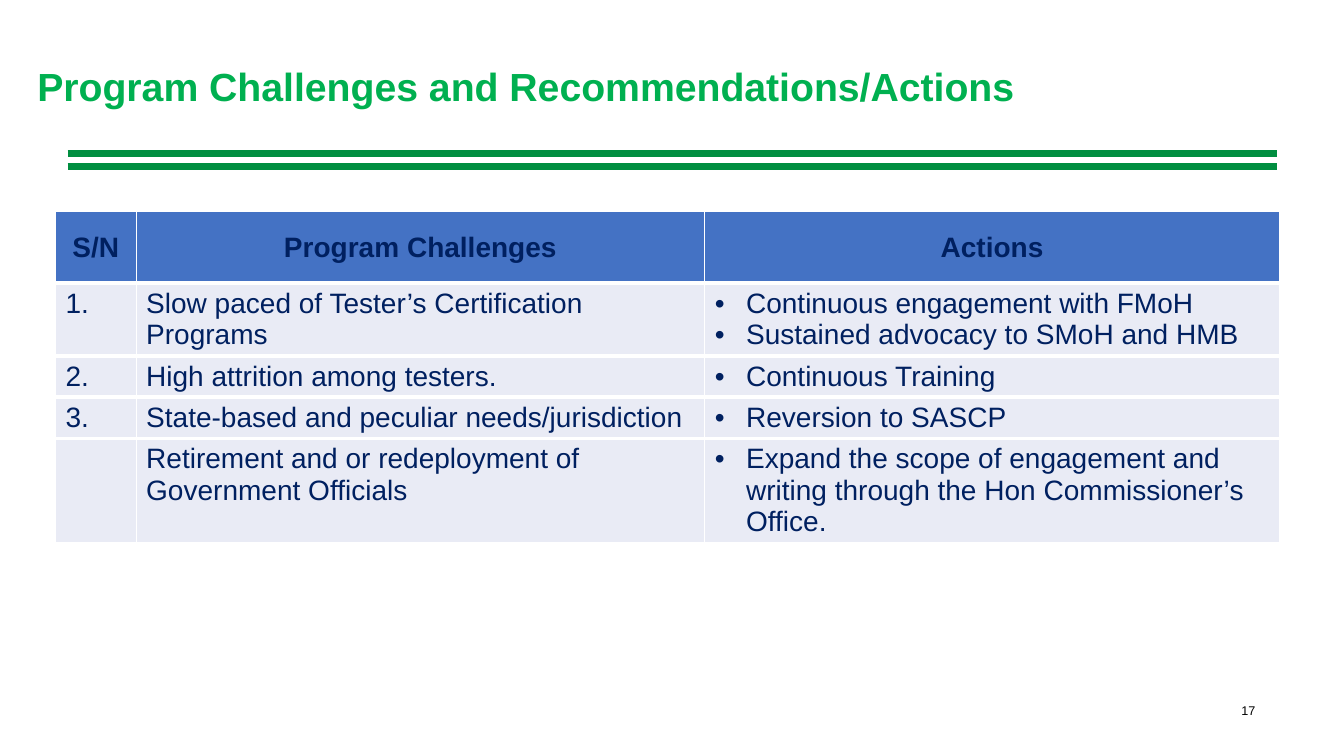
from pptx import Presentation
from pptx.dml.color import RGBColor
from pptx.enum.shapes import MSO_CONNECTOR
from pptx.enum.text import MSO_ANCHOR, MSO_AUTO_SIZE, PP_ALIGN
from pptx.oxml import parse_xml
from pptx.oxml.ns import nsdecls
from pptx.util import Inches, Pt

STRAIGHT = MSO_CONNECTOR.STRAIGHT
TOP, MIDDLE = MSO_ANCHOR.TOP, MSO_ANCHOR.MIDDLE
LEFT, CENTER, RIGHT = PP_ALIGN.LEFT, PP_ALIGN.CENTER, PP_ALIGN.RIGHT
NO_FIT = MSO_AUTO_SIZE.NONE

COLORS = {"title": "00B050", "rule": "008E40", "header": "4472C4",
          "body": "E9EBF5", "text": "002060", "border": "FFFFFF",
          "number": "000000"}
TITLE_FONT = {"name": "Arial", "size": Pt(28), "bold": True}
HEADER_FONT = {"name": "Arial", "size": Pt(20), "bold": True}
BODY_FONT = {"name": "Arial", "size": Pt(20), "bold": False}
NUMBER_FONT = {"name": "Arial", "size": Pt(9), "bold": False}

COLUMNS = [0.8, 5.64, 5.7]
ROW_HEIGHTS = [0.71, 0.71, 0.41, 0.41, 1.02]
HEADINGS = ["S/N", "Program Challenges", "Actions"]
CHALLENGES = [
    ("1.", "Slow paced of Tester’s Certification Programs",
     ["Continuous engagement with FMoH",
      "Sustained advocacy to SMoH and HMB"]),
    ("2.", "High attrition among testers.", ["Continuous Training"]),
    ("3.", "State-based and peculiar needs/jurisdiction",
     ["Reversion to SASCP"]),
    ("", "Retirement and or redeployment of Government Officials",
     ["Expand the scope of engagement and writing through the Hon "
      "Commissioner’s Office."]),
]


def rgb(name):
    return RGBColor.from_string(COLORS[name])


def write(p, text, font, color, align=LEFT):
    p.alignment = align
    r = p.add_run()
    r.text = text
    for key, value in font.items():
        setattr(r.font, key, value)
    r.font.color.rgb = rgb(color)


def add_bullet(p):
    pPr = p._p.get_or_add_pPr()
    pPr.set("marL", str(Inches(0.31)))
    pPr.set("indent", str(-Inches(0.31)))
    pPr.append(parse_xml(f'<a:buFont {nsdecls("a")} typeface="Arial"/>'))
    pPr.append(parse_xml(f'<a:buChar {nsdecls("a")} char="•"/>'))


def set_borders(cell, top, bottom):
    widths = {"lnL": 1, "lnR": 1, "lnT": top, "lnB": bottom}
    tcPr = cell._tc.get_or_add_tcPr()
    for i, (side, width) in enumerate(widths.items()):
        tcPr.insert(i, parse_xml(
            f'<a:{side} {nsdecls("a")} w="{Pt(width)}"><a:solidFill>'
            f'<a:srgbClr val="{COLORS["border"]}"/></a:solidFill></a:{side}>'))


def add_title(s, x, y, w, h):
    title = s.shapes.title
    title.left, title.top = Inches(x), Inches(y)
    title.width, title.height = Inches(w), Inches(h)
    tf = title.text_frame
    tf.word_wrap, tf.auto_size = True, NO_FIT
    tf.vertical_anchor = MIDDLE
    p = tf.paragraphs[0]
    p.line_spacing = 0.9
    write(p, "Program Challenges and Recommendations/Actions",
          TITLE_FONT, "title")


def add_double_rule(s, x, y, w, gap):
    for line_y in (y, y + gap):
        line = s.shapes.add_connector(
            STRAIGHT, Inches(x), Inches(line_y), Inches(x + w), Inches(line_y))
        line.line.color.rgb = rgb("rule")
        line.line.width = Pt(5)
        line._element.spPr.append(parse_xml(f'<a:effectLst {nsdecls("a")}/>'))


def add_challenges(s, x, y):
    table = s.shapes.add_table(
        len(ROW_HEIGHTS), len(COLUMNS), Inches(x), Inches(y),
        Inches(sum(COLUMNS)), Inches(sum(ROW_HEIGHTS))).table
    for column, width in zip(table.columns, COLUMNS):
        column.width = Inches(width)
    for row, height in zip(table.rows, ROW_HEIGHTS):
        row.height = Inches(height)

    # Header row
    for cell, heading in zip(table.rows[0].cells, HEADINGS):
        cell.vertical_anchor = MIDDLE
        write(cell.text_frame.paragraphs[0], heading, HEADER_FONT, "text",
              CENTER)

    # Challenges with their bulleted actions
    for i, (number, challenge, actions) in enumerate(CHALLENGES, 1):
        for j, text in enumerate((number, challenge)):
            if text:
                p = table.cell(i, j).text_frame.paragraphs[0]
                write(p, text, BODY_FONT, "text")
        tf = table.cell(i, 2).text_frame
        for k, action in enumerate(actions):
            p = tf.add_paragraph() if k else tf.paragraphs[0]
            add_bullet(p)
            write(p, action, BODY_FONT, "text")

    # Fills and borders
    last = len(ROW_HEIGHTS) - 1
    for i, row in enumerate(table.rows):
        for cell in row.cells:
            cell.fill.solid()
            cell.fill.fore_color.rgb = rgb("body" if i else "header")
            set_borders(cell, 3 if i else 1, 1 if i == last else 3)


def add_page_number(s, x, y, w, h):
    tf = s.shapes.add_textbox(
        Inches(x), Inches(y), Inches(w), Inches(h)).text_frame
    tf.word_wrap = True
    tf.vertical_anchor = TOP
    write(tf.paragraphs[0], "17", NUMBER_FONT, "number", RIGHT)


def main():
    prs = Presentation()
    prs.slide_width, prs.slide_height = Inches(13.33), Inches(7.5)
    s = prs.slides.add_slide(prs.slide_layouts[5])
    add_title(s, 0.27, 0.63, 12.05, 0.5)
    add_double_rule(s, 0.67, 1.52, 12, 0.13)
    add_challenges(s, 0.55, 2.1)
    add_page_number(s, 9.44, 6.92, 3.11, 0.52)
    prs.save("out.pptx")


if __name__ == "__main__":
    main()
